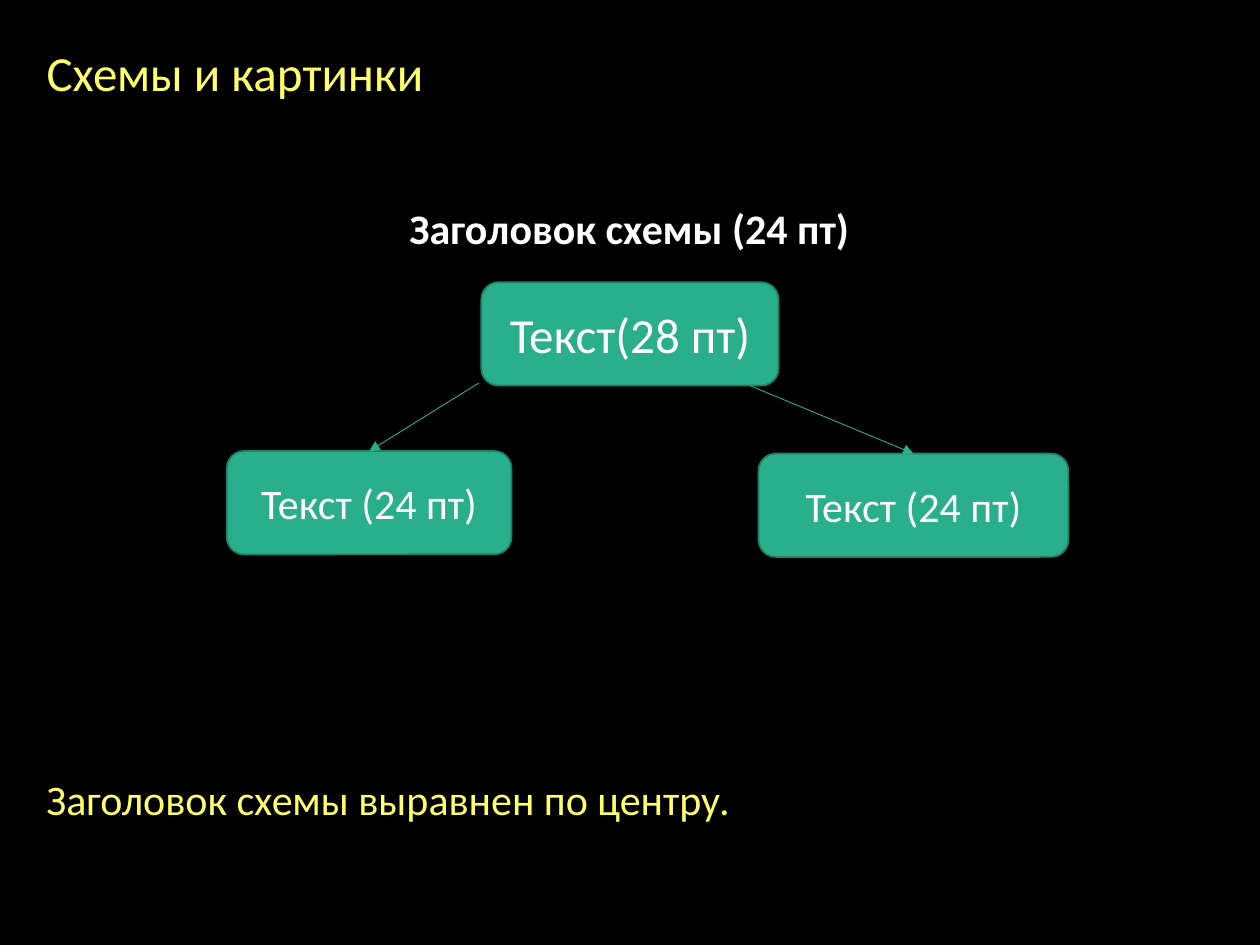
"""Build a slide with a titled two-branch scheme and a note."""
from lxml import etree
from pptx import Presentation
from pptx import util as u
from pptx.dml.color import RGBColor
from pptx.enum import shapes, text
from pptx.oxml import ns

BLACK = RGBColor(0x00, 0x00, 0x00)
WHITE = RGBColor(0xFF, 0xFF, 0xFF)
YELLOW = RGBColor(0xFF, 0xFF, 0x66)
GREEN = RGBColor(0x29, 0xAF, 0x8C)
DARK_GREEN = RGBColor(0x1E, 0x81, 0x68)
FONT = "Calibri"
NODE_HEIGHT = 0.82


def inches(*lengths):
    return [u.Inches(length) for length in lengths]


def write(shape, wording, size, color, align=text.PP_ALIGN.LEFT,
          anchor=text.MSO_ANCHOR.TOP, bold=False):
    frame = shape.text_frame
    frame.word_wrap = True
    frame.auto_size = text.MSO_AUTO_SIZE.NONE
    frame.vertical_anchor = anchor
    frame.text = wording
    para = frame.paragraphs[0]
    para.alignment = align
    para.line_spacing = 1.0
    para.space_before = u.Pt(0)
    para.font.name = FONT
    para.font.size = u.Pt(size)
    para.font.bold = bold
    para.font.color.rgb = color
    return para


def add_title(page, wording):
    title = page.shapes.title
    title.left, title.top, title.width, title.height = inches(0.27, 0.29, 9.92, 0.57)
    write(title, wording, 28, YELLOW)


def add_label(page, place, wording, color, **style):
    box = page.shapes.add_textbox(*inches(*place))
    return write(box, wording, 24, color, **style)


def add_node(page, left, top, width, wording, size):
    node = page.shapes.add_shape(shapes.MSO_SHAPE.ROUNDED_RECTANGLE,
                                 *inches(left, top, width, NODE_HEIGHT))
    node.shadow.inherit = False
    node.fill.solid()
    node.fill.fore_color.rgb = GREEN
    node.line.color.rgb = DARK_GREEN
    node.line.width = u.Pt(1)
    write(node, wording, size, WHITE, text.PP_ALIGN.CENTER, text.MSO_ANCHOR.MIDDLE)


def add_arrow(page, start, end):
    arrow = page.shapes.add_connector(shapes.MSO_CONNECTOR.STRAIGHT,
                                      *inches(*start, *end))
    arrow.line.color.rgb = GREEN
    arrow.line.width = u.Pt(0.5)
    etree.SubElement(arrow.line._get_or_add_ln(), ns.qn("a:tailEnd"), type="triangle")
    etree.SubElement(arrow._element.spPr, ns.qn("a:effectLst"))


def main():
    deck = Presentation()
    deck.slide_width, deck.slide_height = inches(10, 7.5)
    page = deck.slides.add_slide(deck.slide_layouts[5])
    page.background.fill.solid()
    page.background.fill.fore_color.rgb = BLACK

    add_title(page, "Схемы и картинки")
    add_node(page, 3.82, 2.24, 2.36, "Текст(28 пт)", 28)
    add_node(page, 1.8, 3.58, 2.26, "Текст (24 пт)", 24)
    add_node(page, 6.02, 3.6, 2.46, "Текст (24 пт)", 24)
    add_arrow(page, (5.95, 3.06), (7.25, 3.6))
    add_arrow(page, (3.8, 3.04), (2.93, 3.58))
    add_label(page, (2.71, 1.56, 4.57, 0.5), "Заголовок схемы (24 пт)", WHITE,
              align=text.PP_ALIGN.CENTER, bold=True)
    note = add_label(page, (0.27, 6.09, 10, 0.5),
                     "Заголовок схемы выравнен по центру.", YELLOW)
    note.space_before = u.Pt(6)
    deck.save("out.pptx")


if __name__ == "__main__":
    main()
